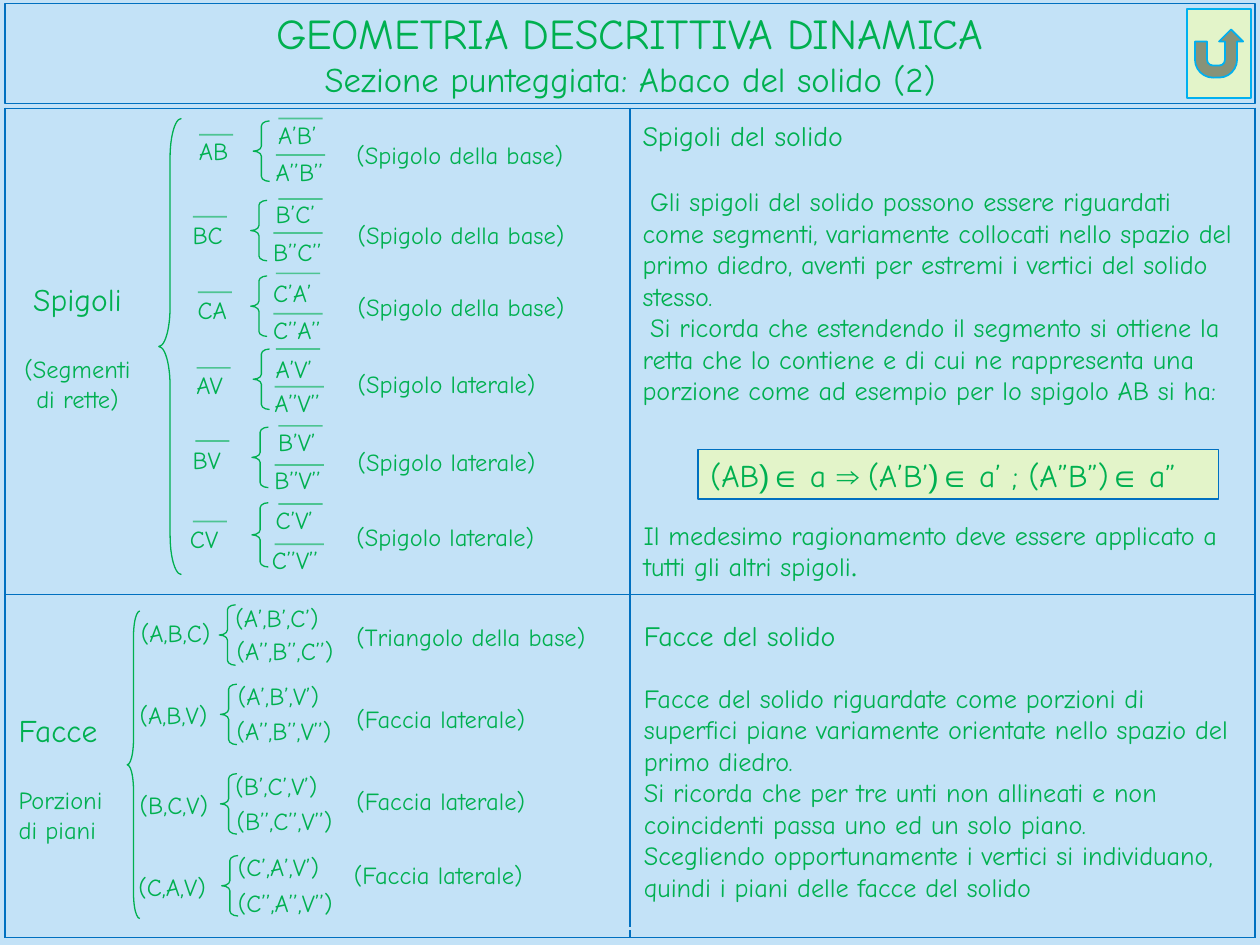
from dataclasses import dataclass

from lxml.etree import SubElement
from pptx import Presentation
from pptx.dml.color import RGBColor
from pptx.enum.shapes import MSO_CONNECTOR, MSO_SHAPE
from pptx.enum.text import MSO_ANCHOR, MSO_AUTO_SIZE, PP_ALIGN
from pptx.oxml import parse_xml
from pptx.oxml.ns import nsdecls, qn
from pptx.util import Inches, Pt

COLS, ROWS = 100, 75


@dataclass(frozen=True)
class Theme:
    back: str = "C3E2F7"
    ink: str = "00B050"
    edge: str = "0070C0"
    glow: str = "00B0F0"
    pale: str = "E3F4C9"
    font: str = "Comic Neue"
    maths: str = "Arial"
    serif: str = "Times New Roman"
    top: float = 24.3
    sub: float = 19.8
    big: float = 18
    head: float = 16
    text: float = 15
    small: float = 14


THEME = Theme()


def write(para, text, size=THEME.small, font=THEME.font, color=THEME.ink):
    run = para.add_run()
    run.text = text
    run.font.size = Pt(size)
    run.font.name = font
    run.font.color.rgb = RGBColor.from_string(color)


def prime(name, mark, glue=""):
    return glue.join(letter + mark for letter in name)


class Board:
    def __init__(self, deck, theme):
        self.theme = theme
        self.wide, self.high = deck.slide_width, deck.slide_height
        self.slide = deck.slides.add_slide(deck.slide_layouts[3])
        self.shapes = self.slide.shapes
        self.paint(self.slide.background, theme.back)

    def spot(self, col, row):
        return round(self.wide * col / COLS), round(self.high * row / ROWS)

    def box(self, col, row, wide, high):
        return *self.spot(col, row), *self.spot(wide, high)

    def move(self, shape, *place):
        shape.left, shape.top, shape.width, shape.height = self.box(*place)

    def paint(self, thing, color):
        thing.fill.solid()
        thing.fill.fore_color.rgb = RGBColor.from_string(color)

    def stroke(self, shape, color, width):
        shape.line.color.rgb = RGBColor.from_string(color)
        shape.line.width = Pt(width)

    def shape(self, kind, place, line, width, fill=None):
        item = self.shapes.add_shape(kind, *self.box(*place))
        item.shadow.inherit = False
        self.stroke(item, line, width)
        if fill:
            self.paint(item, fill)
        else:
            item.fill.background()
        return item

    def brace(self, place, bend):
        item = self.shape(MSO_SHAPE.LEFT_BRACE, place, self.theme.ink, 0)
        item.adjustments[0] = bend

    def rule(self, start, end, color, width, alpha=None, home=None):
        line = (home or self.shapes).add_connector(
            MSO_CONNECTOR.STRAIGHT, *self.spot(*start), *self.spot(*end))
        self.stroke(line, color, width)
        props = line._element.spPr
        SubElement(props, qn("a:effectLst"))
        if alpha:
            tint = props.find(".//" + qn("a:srgbClr"))
            SubElement(tint, qn("a:alpha")).set("val", str(alpha * 1000))

    def fill(self, frame, parts, align=PP_ALIGN.LEFT):
        frame.word_wrap = True
        frame.auto_size = MSO_AUTO_SIZE.NONE
        for spot, (text, size, gap) in enumerate(parts):
            para = frame.paragraphs[0] if spot == 0 else frame.add_paragraph()
            para.alignment = align
            para.space_before = Pt(gap)
            write(para, text, size=size)
        return frame

    def label(self, place, *parts, align=PP_ALIGN.LEFT, home=None):
        item = (home or self.shapes).add_textbox(*self.box(*place))
        return self.fill(item.text_frame, parts, align)

    def note(self, place, text, home=None):
        self.label(place, (text, self.theme.small, 0), home=home)

    def over(self, text, col, row, left, top, long):
        home = self.shapes.add_group_shape().shapes
        self.note((col, row, 6.3, 2), text, home)
        self.rule((left, top), (left + long, top), self.theme.ink, 1, 60, home)

    def title(self, place, *lines):
        item = self.shapes.title
        self.move(item, *place)
        self.paint(item, self.theme.back)
        self.stroke(item, self.theme.edge, 0.75)
        frame = item.text_frame
        frame.auto_size = MSO_AUTO_SIZE.NONE
        frame.vertical_anchor = MSO_ANCHOR.MIDDLE
        para = frame.paragraphs[0]
        para.alignment = PP_ALIGN.CENTER
        for spot, (text, size) in enumerate(lines):
            if spot:
                para.add_line_break()
            write(para, text, size=size)

    def body(self, index, place, parts, inset=()):
        item = self.slide.placeholders[index]
        self.move(item, *place)
        frame = self.fill(item.text_frame, parts)
        for spot, para in enumerate(frame.paragraphs):
            props = para._p.get_or_add_pPr()
            props.set("marL", "0")
            props.set("indent", str(Inches(0.06) if spot in inset else 0))
            SubElement(props, qn("a:buNone"))

    def table(self, place, highs):
        grid = self.shapes.add_table(len(highs), 2, *self.box(*place)).table
        grid.first_row = grid.horz_banding = False
        for row, high in zip(grid.rows, highs):
            row.height = self.spot(0, high)[1]
        for cell in grid.iter_cells():
            props = cell._tc.get_or_add_tcPr()
            for side in "LRTB":
                props.append(parse_xml(
                    f'<a:ln{side} {nsdecls("a")} w="{Pt(1)}"><a:solidFill>'
                    f'<a:srgbClr val="{self.theme.edge}"/></a:solidFill></a:ln{side}>'))
            cell.fill.background()

    def sum(self, place, parts):
        item = self.shape(MSO_SHAPE.RECTANGLE, place, self.theme.edge, 0.75, self.theme.pale)
        para = item.text_frame.paragraphs[0]
        para.alignment = PP_ALIGN.LEFT
        for text, font in parts:
            write(para, text, size=self.theme.big, font=font)


BASE, SIDE, FACE = "(Spigolo della base)", "(Spigolo laterale)", "(Faccia laterale)"
EDGES = [
    ("AB", BASE, (27.3, 10.6), (20.1, 9.6, 4.8), (14.8, 10.3, 15.8, 10.7), (21.1, 9, 22.1, 9.4), (20.9, 12, 21.9, 12.3)),
    ("BC", BASE, (27.4, 17), (19.9, 15.9, 4.8), (14.3, 17, 15.3, 17.2), (20.9, 15.3, 22.1, 15.8), (20.7, 18.3, 21.7, 18.5)),
    ("CA", BASE, (27.4, 22.7), (19.9, 21.9, 4.8), (14.7, 22.9, 15.7, 23.2), (20.7, 21.6, 21.9, 21.7), (20.7, 24.5, 21.7, 24.9)),
    ("AV", SIDE, (27.4, 28.8), (20.1, 27.7, 4.8), (14.6, 28.9, 15.6, 29.2), (20.9, 27.6, 21.9, 27.7), (20.8, 30.3, 21.8, 30.7)),
    ("BV", SIDE, (27.4, 35), (20, 33.9, 4.8), (14.3, 34.8, 15.5, 35), (21.1, 33.4, 22.1, 33.8), (20.8, 36.4, 21.8, 36.9)),
    ("CV", SIDE, (27.3, 40.9), (20, 39.9, 5.1), (14.1, 41.1, 15.3, 41.4), (20.9, 39.6, 22.1, 40), (20.6, 42.8, 21.8, 43.2)),
]
FACES = [
    ("ABC", "(Triangolo della base)", (27.3, 48.9), (17.4, 48), (10.2, 48.6), (17.7, 47.4), (17.8, 50)),
    ("ABV", FACE, (27.3, 55.4), (17.5, 54.3), (10.1, 55.1), (17.9, 53.6), (17.8, 56.3)),
    ("BCV", FACE, (27.3, 61.9), (17.5, 61.4), (10.1, 62.2), (17.7, 60.7), (17.8, 63.5)),
    ("CAV", FACE, (27.1, 67.8), (17.6, 67.9), (10, 68.7), (17.9, 67.1), (17.9, 70)),
]
MARKS = ("", "’", "’’")


def main():
    deck = Presentation()
    deck.slide_width, deck.slide_height = Inches(10), Inches(7.5)
    look = THEME
    board = Board(deck, look)
    board.title((0.4, 0.3, 99.2, 7.9), ("GEOMETRIA DESCRITTIVA DINAMICA", look.top),
                ("Sezione punteggiata: Abaco del solido (2)", look.sub))
    board.table((0.4, 8.6, 99.2, 65.7), (38.6, 27.2))
    board.rule((0.5, 73.7), (99.5, 73.7), look.back, 0)

    board.label((0.4, 21.7, 11.5, 11.8), ("Spigoli", look.big, 0),
                ("(Segmenti di rette)", look.small, 21), align=PP_ALIGN.CENTER)
    board.brace((12.6, 9.4, 1.8, 36.2), 1.725)
    for name, note, place, (col, row, high), *spots in EDGES:
        board.note((*place, 21.7, 3.4), note)
        board.brace((col, row, 1.3, high), 0.306)
        for mark, long, spot in zip(MARKS, (2.7, 3.5, 3.9), spots):
            board.over(prime(name, mark), *spot, long)

    board.label((0.5, 55.9, 9.4, 11.8), ("Facce", look.big, 0),
                ("Porzioni di piani", look.small, 21))
    board.brace((10.1, 48.5, 1, 24.4), 2.017)
    for name, note, place, brace, *spots in FACES:
        board.note((*place, 21.7, 3.4), note)
        board.brace((*brace, 1.3, 4.8), 0.307)
        for mark, wide, spot in zip(MARKS, (8.7, 9.8, 11.8), spots):
            board.note((*spot, wide, 2), f"({prime(name, mark, ',')})")

    board.body(1, (50, 8.9, 48.8, 26.8), [
        ("Spigoli del solido", look.head, 0),
        ("Gli spigoli del solido possono essere riguardati come segmenti, variamente collocati nello spazio del primo diedro, aventi per estremi i vertici del solido stesso.", look.text, 19),
        ("Si ricorda che estendendo il segmento si ottiene la retta che lo contiene e di cui ne rappresenta una porzione come ad esempio per lo spigolo AB si ha:", look.text, 0),
    ], inset=(1, 2))
    board.sum((55.4, 35.7, 41.3, 3.9), [
        ("(AB", look.font), (")∈ ", look.maths), ("a ", look.font), ("⇒ ", look.maths),
        ("(A’B’", look.font), (")∈ ", look.maths), ("a’ ; (A”B”)", look.font),
        ("∈ ", look.maths), ("a”", look.font)])
    last = board.label((50.1, 40.7, 47.5, 6.1), (
        "Il medesimo ragionamento deve essere applicato a tutti gli altri spigoli", look.text, 0))
    write(last.paragraphs[0], ".", size=look.text, font=look.serif)
    board.body(2, (50.1, 48.6, 49.2, 23.7), [
        ("Facce del solido", look.head, 0),
        ("Facce del solido riguardate come porzioni di superfici piane variamente orientate nello spazio del primo diedro.", look.text, 17),
        ("Si ricorda che per tre unti non allineati e non coincidenti passa uno ed un solo piano.", look.text, 0),
        ("Scegliendo opportunamente i vertici si individuano, quindi i piani delle facce del solido", look.text, 0),
    ])
    board.shape(MSO_SHAPE.ACTION_BUTTON_RETURN, (94.2, 0.7, 5.1, 7.1), look.glow, 1, look.pale)
    deck.save("out.pptx")


if __name__ == "__main__":
    main()
